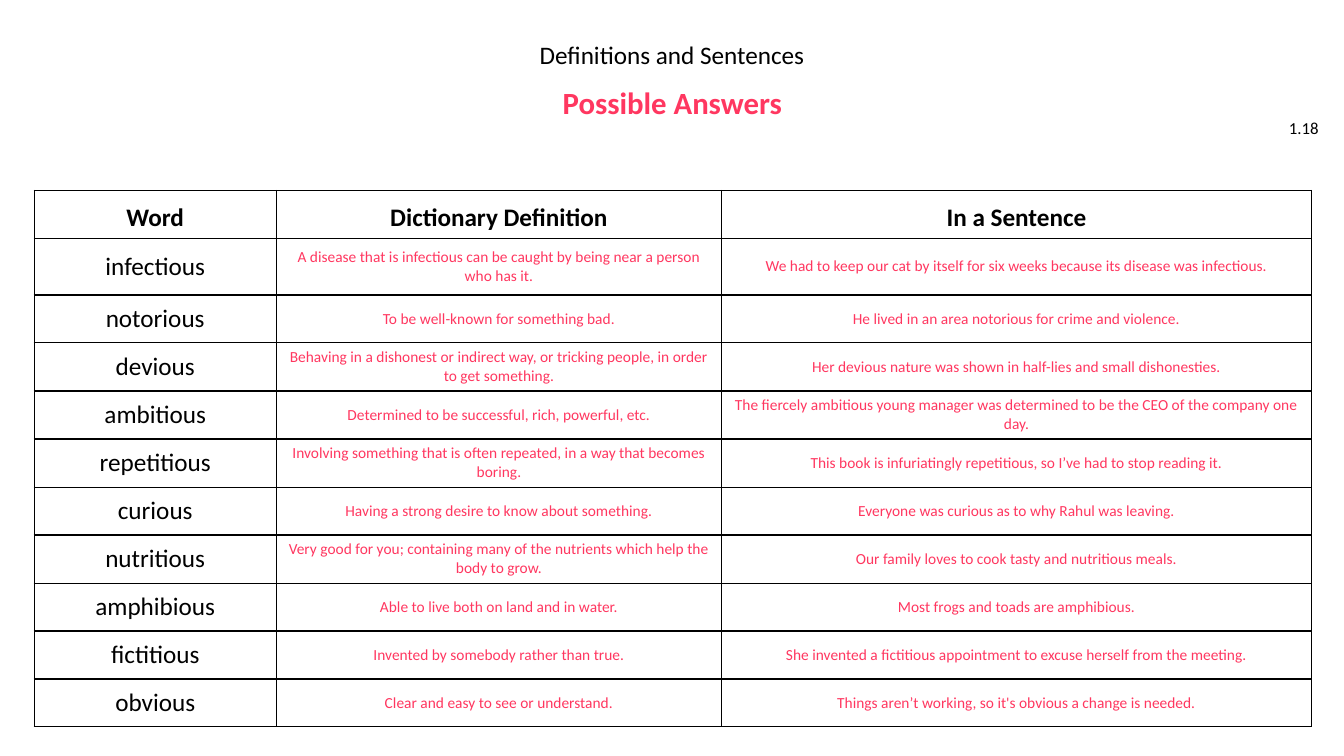
from dataclasses import dataclass

from lxml.etree import SubElement
from pptx import Presentation
from pptx.dml.color import RGBColor
from pptx.enum.text import MSO_ANCHOR, MSO_AUTO_SIZE, PP_ALIGN
from pptx.oxml.ns import qn
from pptx.shapes.base import BaseShape
from pptx.slide import Slide
from pptx.table import _Cell
from pptx.text.text import TextFrame
from pptx.util import Pt

BLACK = "000000"
WHITE = "FFFFFF"
ANSWER_PINK = "FF3760"
COLUMN_WIDTHS = (172.8, 318.24, 421.2)
ROW_HEIGHT = 34.2
FIRST_WORD_HEIGHT = 40.4


@dataclass(frozen=True)
class TextStyle:
    size: float
    color: str = BLACK
    bold: bool = False
    alignment: PP_ALIGN = PP_ALIGN.CENTER
    anchor: MSO_ANCHOR = MSO_ANCHOR.MIDDLE
    line_spacing: float = 1.0


@dataclass(frozen=True)
class Box:
    left: float
    top: float
    width: float
    height: float


@dataclass(frozen=True)
class Entry:
    word: str
    definition: str
    sentence: str


HEADER = TextStyle(18, bold=True, anchor=MSO_ANCHOR.BOTTOM)
WORD = TextStyle(18)
ANSWER = TextStyle(11, ANSWER_PINK)
TITLE = TextStyle(18, anchor=MSO_ANCHOR.TOP, line_spacing=0.9)
SUBTITLE = TextStyle(22, ANSWER_PINK, bold=True, line_spacing=0.9)
PAGE_LABEL = TextStyle(12, alignment=PP_ALIGN.RIGHT)

ENTRIES = (
    Entry("infectious",
          "A disease that is infectious can be caught by being near a person who has it.",
          "We had to keep our cat by itself for six weeks because its disease was infectious."),
    Entry("notorious", "To be well-known for something bad.",
          "He lived in an area notorious for crime and violence."),
    Entry("devious",
          "Behaving in a dishonest or indirect way, or tricking people, in order to get something.",
          "Her devious nature was shown in half-lies and small dishonesties."),
    Entry("ambitious", "Determined to be successful, rich, powerful, etc.",
          "The fiercely ambitious young manager was determined to be the CEO of the company one day."),
    Entry("repetitious",
          "Involving something that is often repeated, in a way that becomes boring.",
          "This book is infuriatingly repetitious, so I’ve had to stop reading it."),
    Entry("curious", "Having a strong desire to know about something.",
          "Everyone was curious as to why Rahul was leaving."),
    Entry("nutritious",
          "Very good for you; containing many of the nutrients which help the body to grow.",
          "Our family loves to cook tasty and nutritious meals."),
    Entry("amphibious", "Able to live both on land and in water.",
          "Most frogs and toads are amphibious."),
    Entry("fictitious", "Invented by somebody rather than true.",
          "She invented a fictitious appointment to excuse herself from the meeting."),
    Entry("obvious", "Clear and easy to see or understand.",
          "Things aren’t working, so it's obvious a change is needed."),
)


def hex_color(value: str) -> RGBColor:
    return RGBColor.from_string(value)


def write_text(frame: TextFrame, text: str, style: TextStyle) -> None:
    paragraph = frame.paragraphs[0]
    paragraph.alignment = style.alignment
    paragraph.line_spacing = style.line_spacing
    paragraph.space_before = Pt(0)
    run = paragraph.add_run()
    run.text = text
    run.font.name = "Calibri"
    run.font.size = Pt(style.size)
    run.font.bold = style.bold
    run.font.color.rgb = hex_color(style.color)


def fill_text_shape(shape: BaseShape, box: Box, text: str, style: TextStyle) -> None:
    shape.left, shape.top = Pt(box.left), Pt(box.top)
    shape.width, shape.height = Pt(box.width), Pt(box.height)
    frame = shape.text_frame
    frame.word_wrap = True
    frame.auto_size = MSO_AUTO_SIZE.NONE
    frame.vertical_anchor = style.anchor
    write_text(frame, text, style)


def add_text(slide: Slide, box: Box, text: str, style: TextStyle) -> None:
    shape = slide.shapes.add_textbox(0, 0, 0, 0)
    fill_text_shape(shape, box, text, style)


def set_borders(cell: _Cell) -> None:
    """Draw a thin black line on all four sides, ahead of the cell's fill."""
    properties = cell._tc.get_or_add_tcPr()
    for position, side in enumerate(("a:lnL", "a:lnR", "a:lnT", "a:lnB")):
        line = SubElement(properties, qn(side), w=str(Pt(1)))
        solid_fill = SubElement(line, qn("a:solidFill"))
        SubElement(solid_fill, qn("a:srgbClr"), val=BLACK)
        properties.insert(position, line)


def fill_cell(cell: _Cell, text: str, style: TextStyle) -> None:
    cell.fill.solid()
    cell.fill.fore_color.rgb = hex_color(WHITE)
    cell.vertical_anchor = style.anchor
    cell.margin_left = cell.margin_right = Pt(7.2)
    cell.margin_top = cell.margin_bottom = Pt(3.6)
    write_text(cell.text_frame, text, style)
    set_borders(cell)


def add_word_table(slide: Slide, left: float, top: float) -> None:
    heights = [ROW_HEIGHT, FIRST_WORD_HEIGHT] + [ROW_HEIGHT] * (len(ENTRIES) - 1)
    table = slide.shapes.add_table(
        len(heights), len(COLUMN_WIDTHS), Pt(left), Pt(top),
        Pt(sum(COLUMN_WIDTHS)), Pt(sum(heights))).table
    table.horz_banding = False
    for column, width in zip(table.columns, COLUMN_WIDTHS):
        column.width = Pt(width)
    for row, height in zip(table.rows, heights):
        row.height = Pt(height)

    for column_index, heading in enumerate(("Word", "Dictionary Definition", "In a Sentence")):
        fill_cell(table.cell(0, column_index), heading, HEADER)
    for row_index, entry in enumerate(ENTRIES, start=1):
        fill_cell(table.cell(row_index, 0), entry.word, WORD)
        fill_cell(table.cell(row_index, 1), entry.definition, ANSWER)
        fill_cell(table.cell(row_index, 2), entry.sentence, ANSWER)


def main() -> None:
    presentation = Presentation()
    presentation.slide_width, presentation.slide_height = Pt(960), Pt(540)
    slide = presentation.slides.add_slide(presentation.slide_layouts[5])

    fill_text_shape(slide.shapes.title, Box(275, 26.6, 410, 25.2),
                    "Definitions and Sentences", TITLE)
    add_text(slide, Box(150.5, 60.5, 659.5, 28.8), "Possible Answers", SUBTITLE)
    add_text(slide, Box(903.6, 77, 45.4, 28.8), "1.18", PAGE_LABEL)
    add_word_table(slide, left=24.5, top=136.1)
    presentation.save("out.pptx")


if __name__ == "__main__":
    main()
